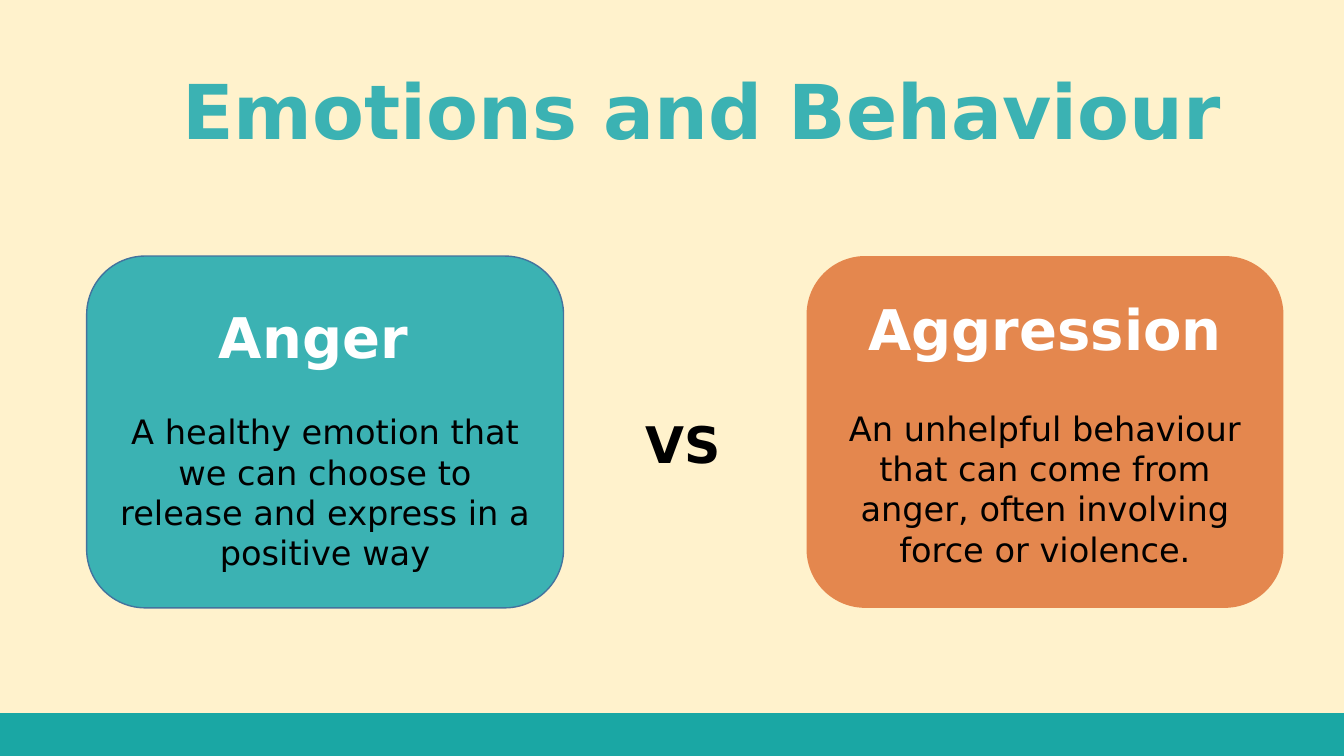
from pptx import Presentation
from pptx.dml.color import RGBColor
from pptx.enum.shapes import MSO_SHAPE
from pptx.enum.text import MSO_ANCHOR, PP_ALIGN
from pptx.util import Inches, Pt

FONT = "DejaVu Sans"
COLORS = {
    "cream": "FFF2CC",
    "teal": "3BB2B3",
    "footer": "1AA7A4",
    "orange": "E4874E",
    "outline": "43739E",
    "white": "FFFFFF",
    "black": "000000",
}
WIDTH, HEIGHT = 13.33, 7.5
CARD_W, CARD_H = 4.73, 3.49
CARD_LEFT, CARD_TOP, CARD_STEP = 0.86, 2.54, 7.14
FOOTER_H = 0.42

CARDS = [
    {
        "heading": [("Anger", 40), (" ", 48)],
        "body": "A healthy emotion that we can choose to release and express in a positive way",
        "fill": "teal",
        "line": "outline",
        "gap": 28,
    },
    {
        "heading": [("Aggression", 40)],
        "body": "An unhelpful behaviour that can come from anger, often involving force or violence.",
        "fill": "orange",
        "line": None,
        "gap": 32.6,
    },
]


def rgb(name):
    return RGBColor.from_string(COLORS[name])


def inches(box):
    return [Inches(v) for v in box]


def add_run(p, text, size, color, bold):
    r = p.add_run()
    r.text = text
    r.font.name = FONT
    r.font.size = Pt(size)
    r.font.bold = bold
    r.font.color.rgb = rgb(color)


def add_panel(slide, kind, box, fill, line):
    sp = slide.shapes.add_shape(kind, *inches(box))
    sp.shadow.inherit = False
    sp.fill.solid()
    sp.fill.fore_color.rgb = rgb(fill)
    if line:
        sp.line.color.rgb = rgb(line)
        sp.line.width = Pt(1)
    else:
        sp.line.fill.background()
    return sp


def add_card(slide, box, card):
    sp = add_panel(slide, MSO_SHAPE.ROUNDED_RECTANGLE, box, card["fill"], card["line"])
    tf = sp.text_frame
    tf.word_wrap = True
    tf.vertical_anchor = MSO_ANCHOR.MIDDLE
    heading, body = tf.paragraphs[0], tf.add_paragraph()
    heading.alignment = body.alignment = PP_ALIGN.CENTER
    heading.space_after = Pt(card["gap"])
    for text, size in card["heading"]:
        add_run(heading, text, size, "white", True)
    add_run(body, card["body"], 24, "black", False)


def add_title(slide, box):
    title = slide.shapes.title
    title.left, title.top, title.width, title.height = inches(box)
    tf = title.text_frame
    tf.word_wrap = True
    tf.vertical_anchor = MSO_ANCHOR.TOP
    p = tf.paragraphs[0]
    p.alignment = PP_ALIGN.CENTER
    add_run(p, "Emotions and Behaviour", 54, "teal", True)


def add_versus(slide, box):
    tf = slide.shapes.add_textbox(*inches(box)).text_frame
    tf.word_wrap = True
    add_run(tf.paragraphs[0], "VS", 36, "black", True)


def build_comparison(prs):
    slide = prs.slides.add_slide(prs.slide_layouts[5])
    slide.background.fill.solid()
    slide.background.fill.fore_color.rgb = rgb("cream")
    add_title(slide, (1.2, 0.58, 11.52, 1.01))
    for i, card in enumerate(CARDS):
        add_card(slide, (CARD_LEFT + i * CARD_STEP, CARD_TOP, CARD_W, CARD_H), card)
    add_versus(slide, (6.3, 4.05, 0.98, 0.71))
    footer = (0, HEIGHT - FOOTER_H, WIDTH, FOOTER_H)
    add_panel(slide, MSO_SHAPE.RECTANGLE, footer, "footer", "footer")


def main():
    prs = Presentation()
    prs.slide_width, prs.slide_height = Inches(WIDTH), Inches(HEIGHT)
    build_comparison(prs)
    prs.save("out.pptx")


if __name__ == "__main__":
    main()
